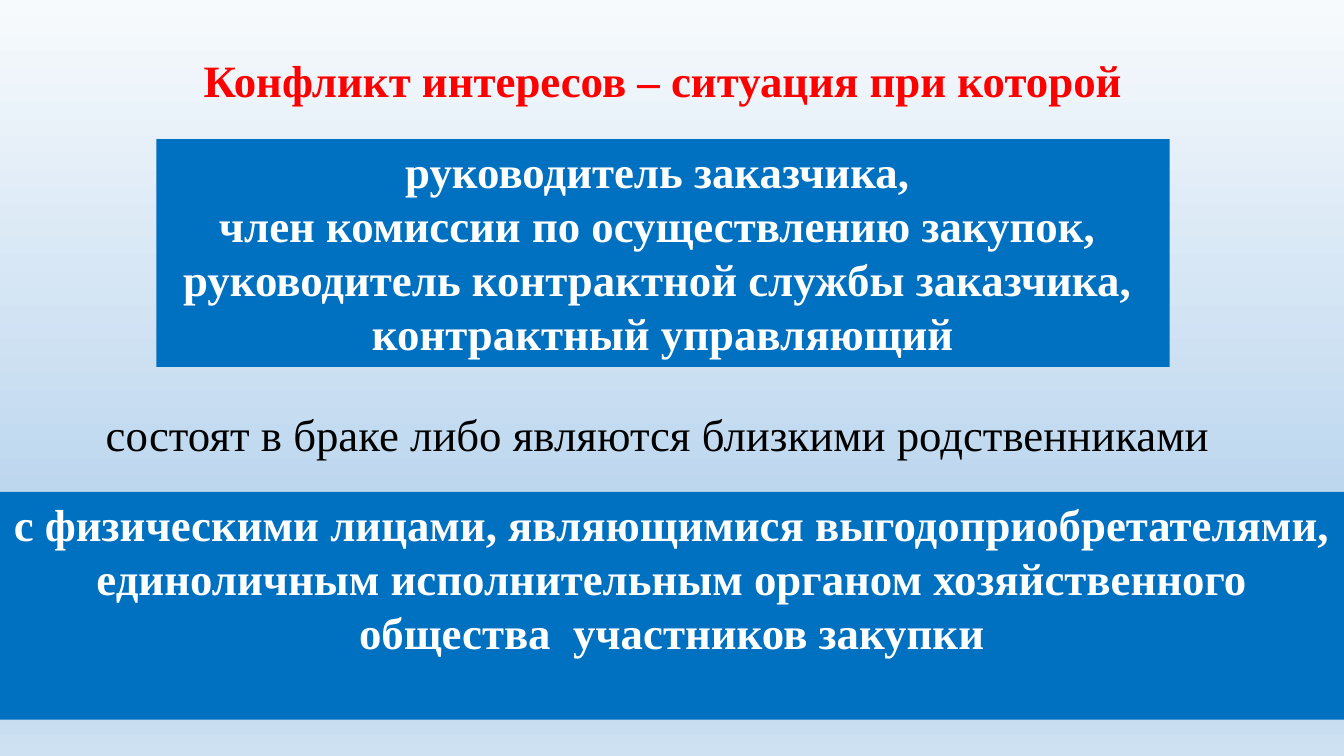
import lxml.etree
import pptx
import pptx.dml.color
import pptx.enum.shapes
import pptx.enum.text
import pptx.oxml.ns
import pptx.util

Inches = pptx.util.Inches
RGBColor = pptx.dml.color.RGBColor
Align = pptx.enum.text.PP_ALIGN
Anchor = pptx.enum.text.MSO_ANCHOR
qn = pptx.oxml.ns.qn

RED = RGBColor(0xFF, 0x00, 0x00)
BLUE = RGBColor(0x00, 0x70, 0xC0)
WHITE = RGBColor(0xFF, 0xFF, 0xFF)
BLACK = RGBColor(0x00, 0x00, 0x00)
PALE = RGBColor(0xF7, 0xFA, 0xFD)
SKY = RGBColor(0xB5, 0xD2, 0xEC)
MIST = RGBColor(0xCE, 0xE1, 0xF2)


class Deck:
    """Holds the text style and the current slide, and adds its elements."""

    font = "Times New Roman"
    size = pptx.util.Pt(32)

    def __init__(self, show):
        self.slide = show.slides.add_slide(show.slide_layouts[5])

    def shade(self, stops):
        fill = self.slide.background.fill
        fill.gradient()
        fill.gradient_angle = 270
        ramp = next(self.slide.element.iter(qn("a:gsLst")))
        for stop in list(ramp):
            ramp.remove(stop)
        for place, color in stops:
            stop = lxml.etree.SubElement(ramp, qn("a:gs"), pos=str(place * 1000))
            lxml.etree.SubElement(stop, qn("a:srgbClr"), val=str(color))

    def label(self, shape, lines, color, bold=True, align=Align.CENTER,
              anchor=Anchor.TOP, space=1.0):
        frame = shape.text_frame
        frame.word_wrap = True
        frame.auto_size = pptx.enum.text.MSO_AUTO_SIZE.NONE
        frame.vertical_anchor = anchor
        frame.text = "\n".join(lines)
        for para in frame.paragraphs:
            para.alignment = align
            para.line_spacing = space
            para.font.name = self.font
            para.font.size = self.size
            para.font.bold = bold
            para.font.color.rgb = color

    def title(self, text, left, top, width, height):
        shape = self.slide.shapes.title
        shape.left, shape.top = Inches(left), Inches(top)
        shape.width, shape.height = Inches(width), Inches(height)
        self.label(shape, [text], RED, anchor=Anchor.MIDDLE, space=0.9)

    def panel(self, lines, left, top, width, height):
        shape = self.slide.shapes.add_shape(
            pptx.enum.shapes.MSO_SHAPE.RECTANGLE,
            Inches(left), Inches(top), Inches(width), Inches(height))
        shape.shadow.inherit = False
        shape.fill.solid()
        shape.fill.fore_color.rgb = BLUE
        shape.line.fill.background()
        self.label(shape, lines, WHITE)

    def note(self, text, left, top, width, height):
        shape = self.slide.shapes.add_textbox(
            Inches(left), Inches(top), Inches(width), Inches(height))
        self.label(shape, [text], BLACK, bold=False,
                   align=Align.JUSTIFY, space=1.3)


def main():
    show = pptx.Presentation()
    show.slide_width, show.slide_height = Inches(13.33), Inches(7.5)
    deck = Deck(show)
    deck.shade([(0, PALE), (74, SKY), (83, SKY), (100, MIST)])
    deck.title("Конфликт интересов – ситуация при которой",
               -0.18, 0, 13.51, 1.65)
    deck.panel(["руководитель заказчика, ",
                "член комиссии по осуществлению закупок, ",
                "руководитель контрактной службы заказчика, ",
                "контрактный управляющий"], 1.55, 1.38, 10.05, 2.26)
    deck.panel(["с физическими лицами, являющимися выгодоприобретателями, "
                "единоличным исполнительным органом хозяйственного "
                "общества  участников закупки"], 0, 4.88, 13.33, 2.26)
    deck.note("состоят в браке либо являются близкими родственниками",
              0.95, 3.83, 11.25, 1.43)
    show.save("out.pptx")


if __name__ == "__main__":
    main()
